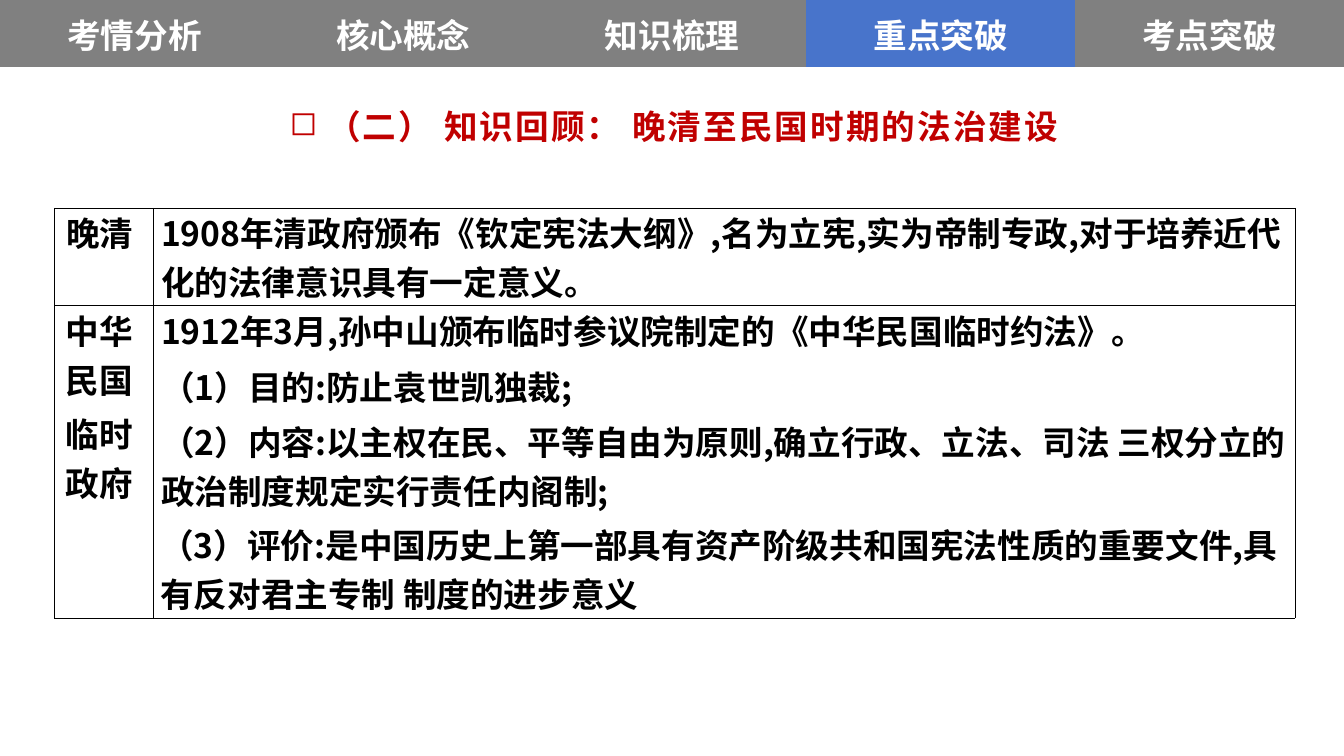
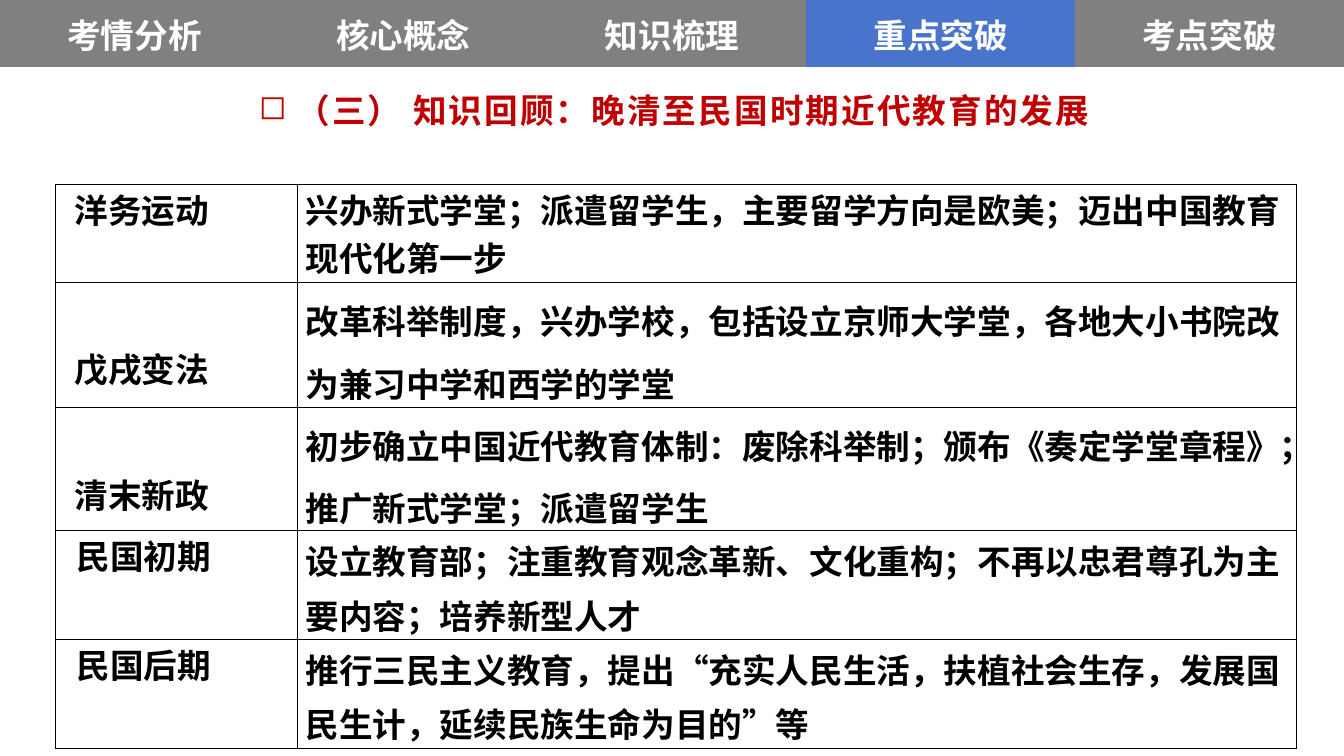
from pptx import Presentation
from pptx.dml.color import RGBColor
from pptx.enum.text import MSO_ANCHOR as ANCHOR, MSO_AUTO_SIZE as AUTO, PP_ALIGN as AL
from pptx.oxml import parse_xml
from pptx.oxml.ns import nsdecls
from pptx.util import Cm, Pt

FONT = "Noto Sans CJK SC"
BLACK, WHITE, RED, GREY, BLUE = "000000", "FFFFFF", "C00000", "808080", "4874CB"
NO_STYLE = "{2D5ABB26-0587-4C30-8999-92F81FD0307C}"
TABS = ["考情分析", "核心概念", "知识梳理", "重点突破", "考点突破"]
ACTIVE = "重点突破"

# Each paragraph: text, left indent (cm), space before (pt), line spacing.
# Each row: height (cm), top margin of the first cell (cm), first cell, second cell.
SLIDES = [
    dict(
        title="（二） 知识回顾： 晚清至民国时期的法治建设",
        title_top=2.54, left=1.37, top=5.24, cols=[2.49, 28.78],
        rows=[
            (2.44, 0, [("晚清", 0.3, 14, 1)],
             [("1908年清政府颁布《钦定宪法大纲》,名为立宪,实为帝制专政,对于培养近代化的法律意识具有一定意义。", 0.2, 5, 1)]),
            (7.87, 0, [("中华民国", 0.28, 0, 1), ("临时政府", 0.28, 4, 1)],
             [("1912年3月,孙中山颁布临时参议院制定的《中华民国临时约法》。", 0.2, 5, 1),
              ("（1）目的:防止袁世凯独裁;", 0.2, 5, 1),
              ("（2）内容:以主权在民、平等自由为原则,确立行政、立法、司法 三权分立的政治制度规定实行责任内阁制;", 0.2, 5, 1),
              ("（3）评价:是中国历史上第一部具有资产阶级共和国宪法性质的重要文件,具有反对君主专制 制度的进步意义", 0.18, 4, 1)]),
        ]),
    dict(
        title="（三） 知识回顾：晚清至民国时期近代教育的发展",
        title_top=2.13, left=1.4, top=4.64, cols=[6.1, 25.17],
        rows=[
            (2.46, 0, [("洋务运动", 0.48, 9, 1)],
             [("兴办新式学堂；派遣留学生，主要留学方向是欧美；迈出中国教育现代化第一步", 0.2, 9, 1)]),
            (3.17, 1.55, [("戊戌变法", 0.48, 0, 1)],
             [("改革科举制度，兴办学校，包括设立京师大学堂，各地大小书院改为兼习中学和西学的学堂", 0.2, 9, 1.29)]),
            (3.1, 1.55, [("清末新政", 0.48, 0, 1)],
             [("初步确立中国近代教育体制：废除科举制；颁布《奏定学堂章程》；推广新式学堂；派遣留学生", 0.2, 9, 1.27)]),
            (2.74, 0, [("民国初期", 0.53, 0, 1)],
             [("设立教育部；注重教育观念革新、文化重构；不再以忠君尊孔为主要内容；培养新型人才", 0.2, 4, 1.11)]),
            (2.74, 0, [("民国后期", 0.53, 0, 1)],
             [("推行三民主义教育，提出“充实人民生活，扶植社会生存，发展国民生计，延续民族生命为目的”等", 0.2, 4, 1.11)]),
        ]),
]


def rgb(color):
    return RGBColor.from_string(color)


def add_run(p, text, color):
    r = p.add_run()
    r.text = text
    r.font.size, r.font.bold, r.font.name = Pt(24), True, FONT
    r.font.color.rgb = rgb(color)
    rPr = r.font._element
    rPr.set("lang", "zh-CN")
    rPr.find("{*}latin").addnext(parse_xml(f'<a:ea {nsdecls("a")} typeface="{FONT}"/>'))
    return rPr


prs = Presentation()
prs.slide_width, prs.slide_height = Cm(33.87), Cm(19.05)

for data in SLIDES:
    s = prs.slides.add_slide(prs.slide_layouts[6])

    nav = s.shapes.add_table(1, len(TABS), 0, 0, prs.slide_width, Cm(1.69)).table
    rows = data["rows"]
    body = s.shapes.add_table(len(rows), 2, Cm(data["left"]), Cm(data["top"]),
                              Cm(sum(data["cols"])), Cm(sum(row[0] for row in rows))).table
    for tbl in (nav, body):
        tbl.first_row = tbl.horz_banding = False
        tbl._tbl.tblPr.find("{*}tableStyleId").text = NO_STYLE

    for cell, tab in zip(nav.rows[0].cells, TABS):
        cell.fill.solid()
        cell.fill.fore_color.rgb = rgb(BLUE if tab == ACTIVE else GREY)
        cell.vertical_anchor = ANCHOR.MIDDLE
        p = cell.text_frame.paragraphs[0]
        p.alignment = AL.CENTER
        add_run(p, tab, WHITE)

    for col, width in zip(body.columns, data["cols"]):
        col.width = Cm(width)
    for row, (height, label_top, label, detail) in zip(body.rows, rows):
        row.height = Cm(height)
        for cell, paras, top in zip(row.cells, (label, detail), (label_top, 0)):
            cell.margin_left = cell.margin_right = cell.margin_bottom = 0
            cell.margin_top = Cm(top)
            tcPr = cell._tc.get_or_add_tcPr()
            for side in "LRTB":
                tcPr.append(parse_xml(
                    f'<a:ln{side} {nsdecls("a")} w="{Pt(0.25)}"><a:solidFill>'
                    f'<a:srgbClr val="{BLACK}"/></a:solidFill></a:ln{side}>'))
            cell.fill.background()
            tf = cell.text_frame
            for i, (text, indent, before, spacing) in enumerate(paras):
                p = tf.add_paragraph() if i else tf.paragraphs[0]
                p.space_before, p.line_spacing = Pt(before), spacing
                pPr = p._p.get_or_add_pPr()
                pPr.set("marL", str(Cm(indent)))
                pPr.set("hangingPunct", "1")
                add_run(p, text, BLACK)

    title = s.shapes.add_textbox(Cm(1.57), Cm(data["title_top"]), Cm(30.84), Cm(1.27))
    tf = title.text_frame
    tf.word_wrap = True
    tf.auto_size = AUTO.SHAPE_TO_FIT_TEXT
    p = tf.paragraphs[0]
    p.alignment = AL.CENTER
    pPr = p._p.get_or_add_pPr()
    pPr.set("marL", str(Cm(0.95)))
    pPr.set("indent", str(-Cm(0.95)))
    pPr.append(parse_xml(f'<a:buChar {nsdecls("a")} char="◻"/>'))
    add_run(p, data["title"], RED).set("spc", "150")

prs.save("out.pptx")
